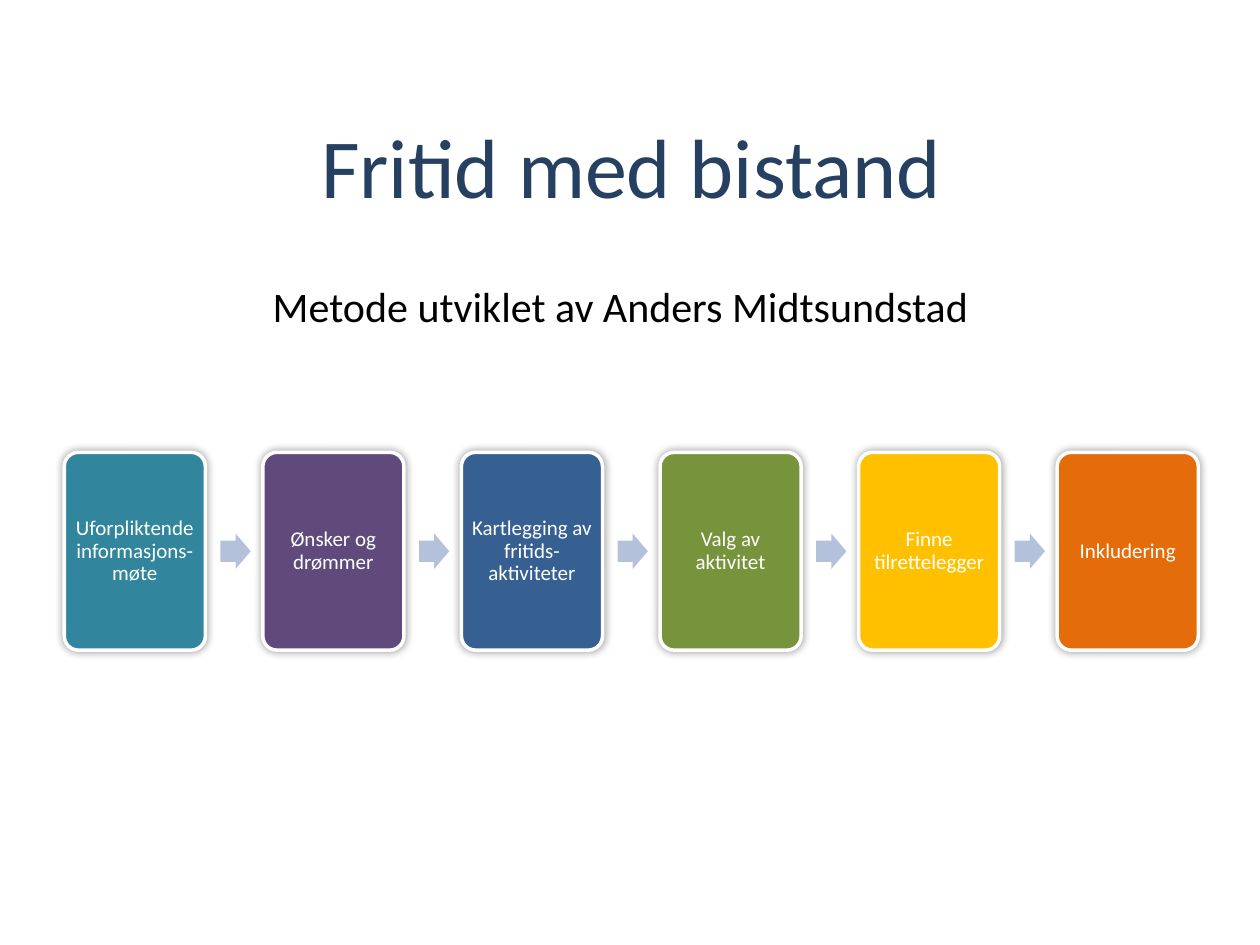
"""Build the 'Fritid med bistand' slide: a title, a subtitle and a six-step process."""
from dataclasses import dataclass

from lxml import etree
from pptx import Presentation
from pptx.dml.color import RGBColor
from pptx.enum.shapes import MSO_SHAPE
from pptx.enum.text import MSO_ANCHOR, PP_ALIGN
from pptx.oxml.ns import qn
from pptx.util import Inches, Pt

CARD, ARROW = MSO_SHAPE.ROUNDED_RECTANGLE, MSO_SHAPE.RIGHT_ARROW
TOP, MIDDLE = MSO_ANCHOR.TOP, MSO_ANCHOR.MIDDLE
CENTER = PP_ALIGN.CENTER


@dataclass(frozen=True)
class Theme:
    font: str = "Calibri"
    title: str = "254061"
    body: str = "000000"
    white: str = "FFFFFF"
    arrow: str = "B3C1DB"
    shadow: str = "000000"
    title_size: int = 48
    subtitle_size: int = 24
    step_size: int = 12


T = Theme()


def write(sp, text, size, color, anchor):
    tf = sp.text_frame
    tf.word_wrap = True
    tf.vertical_anchor = anchor
    p = tf.paragraphs[0]
    p.alignment = CENTER
    r = p.add_run()
    r.text = text
    r.font.name = T.font
    r.font.size = Pt(size)
    r.font.color.rgb = RGBColor.from_string(color)
    return tf


def add_block(kind, x, y, w, h, fill):
    sp = s.shapes.add_shape(kind, Inches(x), Inches(y), Inches(w), Inches(h))
    sp.shadow.inherit = False
    sp.fill.solid()
    sp.fill.fore_color.rgb = RGBColor.from_string(fill)
    sp.line.fill.background()
    return sp


prs = Presentation()
prs.slide_width, prs.slide_height = Inches(10), Inches(7.5)
s = prs.slides.add_slide(prs.slide_layouts[6])

title = s.shapes.add_textbox(Inches(0.51), Inches(0.68), Inches(9), Inches(1.25))
write(title, "Fritid med bistand", T.title_size, T.title, MIDDLE)

subtitle = s.shapes.add_textbox(Inches(0.83), Inches(2.18), Inches(8.19), Inches(0.91))
write(subtitle, "Metode utviklet av Anders Midtsundstad", T.subtitle_size, T.body, TOP)

steps = [
    ("Uforpliktende informasjons-møte", "31859C"),
    ("Ønsker og drømmer", "604A7B"),
    ("Kartlegging av fritids-aktiviteter", "376092"),
    ("Valg av aktivitet", "77933C"),
    ("Finne tilrettelegger", "FFC000"),
    ("Inkludering", "E46C0A"),
]
left, top, width, card_w, card_h = 0.51, 3.59, 9, 1.12, 1.57
arrow_w, arrow_h, arrow_gap = 0.24, 0.28, 0.12
pitch = (width - card_w) / (len(steps) - 1)

for i, (text, color) in enumerate(steps):
    x = left + i * pitch
    card = add_block(CARD, x, top, card_w, card_h, color)
    card.adjustments[0] = 0.1
    card.line.color.rgb = RGBColor.from_string(T.white)
    card.line.width = Pt(2)
    effects = card._element.spPr.find(qn("a:effectLst"))
    shadow = etree.SubElement(effects, qn("a:outerShdw"), blurRad=str(Pt(5)), dist="0", rotWithShape="0")
    shade = etree.SubElement(shadow, qn("a:srgbClr"), val=T.shadow)
    etree.SubElement(shade, qn("a:alpha"), val="40000")

    tf = write(card, text, T.step_size, T.white, MIDDLE)
    tf.margin_left = tf.margin_right = tf.margin_top = tf.margin_bottom = Inches(0.05)
    tf.paragraphs[0].line_spacing = 0.9

    if i < len(steps) - 1:
        arrow = add_block(ARROW, x + card_w + arrow_gap, top + (card_h - arrow_h) / 2,
                          arrow_w, arrow_h, T.arrow)
        arrow.adjustments[0] = 0.6
        arrow.adjustments[1] = 0.5

prs.save("out.pptx")
